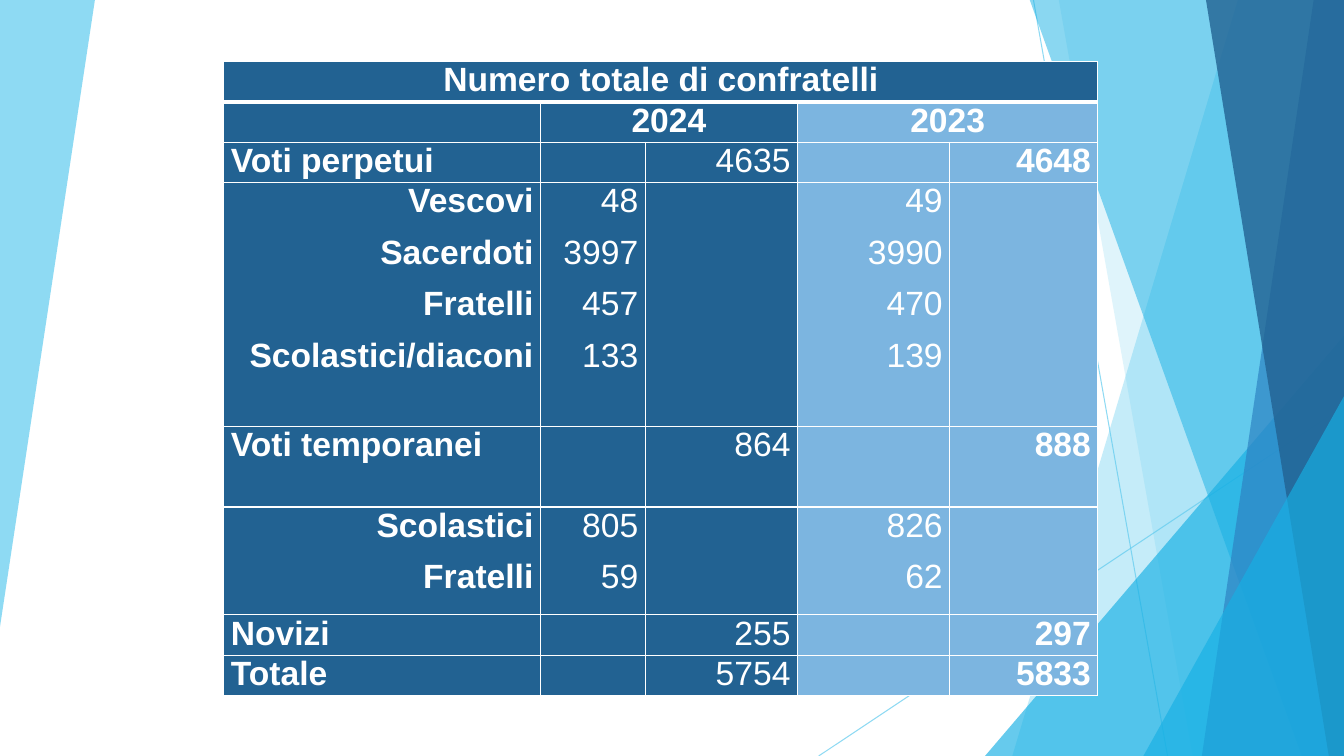
from lxml import etree
from pptx import Presentation
from pptx.dml.color import RGBColor
from pptx.enum import shapes, text
from pptx.oxml.ns import qn
from pptx.util import Inches, Pt

DARK, LIGHT, WHITE = "226292", "7CB5E0", "FFFFFF"
SKY, CYAN, BLUE = "5FCBEF", "17B0E4", "2E83C3"
LEFT, RIGHT = text.PP_ALIGN.JUSTIFY, text.PP_ALIGN.RIGHT
CENTER = text.PP_ALIGN.CENTER
TOP, BOTTOM, EDGE = -0.01, 7.5, 13.33


def rgb(value):
    return RGBColor.from_string(value)


def set_alpha(fill, percent):
    """Make a solid fill, of a shape or a line, partly transparent."""
    color = fill._xPr.find(qn("a:solidFill"))[0]
    etree.SubElement(color, qn("a:alpha"), val=str(percent * 1000))


def write(cell, lines, size=24, font="Arial", color=WHITE, bold=False, align=RIGHT):
    """Fill a cell with one paragraph for each line."""
    frame = cell.text_frame
    for index, line in enumerate(lines):
        paragraph = frame.add_paragraph() if index else frame.paragraphs[0]
        paragraph.alignment = align
        paragraph.space_after = Pt(10)
        run = paragraph.add_run()
        run.text = line
        run.font.size, run.font.name, run.font.bold = Pt(size), font, bold
        run.font.color.rgb = rgb(color)


class Deck:
    def __init__(self):
        self.presentation = Presentation()
        self.presentation.slide_width = Inches(EDGE)
        self.presentation.slide_height = Inches(BOTTOM)
        self.slide = self.presentation.slides.add_slide(
            self.presentation.slide_layouts[6])

    def paint(self, shape, color, opacity):
        shape.shadow.inherit = False
        shape.fill.solid()
        shape.fill.fore_color.rgb = rgb(color)
        set_alpha(shape.fill, opacity)
        shape.line.fill.background()

    def facet(self, points, color, opacity):
        corners = [(Inches(x), Inches(y)) for x, y in points]
        builder = self.slide.shapes.build_freeform(*corners[0])
        builder.add_line_segments(corners[1:], close=True)
        self.paint(builder.convert_to_shape(), color, opacity)

    def corner_triangle(self, left, top):
        """Right triangle filling the bottom right corner of the slide."""
        triangle = self.slide.shapes.add_shape(
            shapes.MSO_SHAPE.ISOSCELES_TRIANGLE, Inches(left), Inches(top),
            Inches(EDGE - left), Inches(BOTTOM - top))
        triangle.adjustments[0] = 1
        self.paint(triangle, CYAN, 66)

    def hairline(self, start, end):
        line = self.slide.shapes.add_connector(
            shapes.MSO_CONNECTOR.STRAIGHT, *map(Inches, start + end))
        line.line.width = Pt(0.75)
        line.line.color.rgb = rgb(SKY)
        set_alpha(line.line.fill, 70)
        etree.SubElement(line._element.spPr, qn("a:effectLst"))

    def table(self, left, top, widths, heights):
        frame = self.slide.shapes.add_table(
            len(heights), len(widths), Inches(left), Inches(top),
            Inches(sum(widths)), Inches(sum(heights)))
        grid = frame.table
        for column, width in zip(grid.columns, widths):
            column.width = Inches(width)
        for row, height in zip(grid.rows, heights):
            row.height = Inches(height)
        return grid

    def style_cell(self, cell, fill, top=1, bottom=1):
        """Set margins, white borders (widths in points) and fill."""
        cell.margin_left = cell.margin_right = Inches(0.07)
        cell.margin_top = cell.margin_bottom = 0
        properties = cell._tc.get_or_add_tcPr()
        for side, width in (("L", 1), ("R", 1), ("T", top), ("B", bottom)):
            border = etree.SubElement(properties, qn("a:ln" + side), w=str(Pt(width)))
            solid = etree.SubElement(border, qn("a:solidFill"))
            etree.SubElement(solid, qn("a:srgbClr"), val=WHITE)
        cell.fill.solid()
        cell.fill.fore_color.rgb = rgb(fill)


def draw_background(deck):
    deck.facet([(0, TOP), (0.94, TOP), (0.94, 0.01), (0, 6.22)], SKY, 70)
    deck.hairline((10.25, 0), (11.58, BOTTOM))
    deck.hairline((EDGE, 4.03), (8.12, BOTTOM))

    def right_facet(top_x, bottom_x, color, opacity):
        deck.facet([(top_x, TOP), (EDGE, TOP), (EDGE, BOTTOM), (bottom_x, BOTTOM)],
                   color, opacity)

    right_facet(12.28, 10.04, SKY, 36)
    right_facet(10.5, 11.83, SKY, 20)
    deck.corner_triangle(9.77, 3.33)
    right_facet(10.21, 12.91, CYAN, 50)
    right_facet(13.03, 11.92, BLUE, 70)
    right_facet(11.96, 13.18, DARK, 80)
    deck.corner_triangle(11.34, 3.93)


def draw_members(deck):
    # Each group: labels, 2024 values, 2023 values, whether it is a breakdown
    groups = [
        (["Voti perpetui"], ["4635"], ["4648"], False),
        (["Vescovi", "Sacerdoti", "Fratelli", "Scolastici/diaconi"],
         ["48", "3997", "457", "133"], ["49", "3990", "470", "139"], True),
        (["Voti temporanei"], ["864"], ["888"], False),
        (["Scolastici", "Fratelli"], ["805", "59"], ["826", "62"], True),
        (["Novizi"], ["255"], ["297"], False),
        (["Totale"], ["5754"], ["5833"], False),
    ]
    members = deck.table(2.22, 0.61, [3.14, 1.04, 1.51, 1.51, 1.47],
                         [0.4, 0.4, 0.4, 2.42, 0.8, 1.07, 0.4, 0.4])
    for row in range(len(members.rows)):
        for column in range(len(members.columns)):
            deck.style_cell(members.cell(row, column),
                            LIGHT if row and column > 2 else DARK,
                            top=3 if row == 1 else 1, bottom=1 if row else 3)

    headings = [(0, 0, 4, "Numero totale di confratelli"),
                (1, 1, 2, "2024"), (1, 3, 4, "2023")]
    for row, first, last, heading in headings:
        members.cell(row, first).merge(members.cell(row, last))
        write(members.cell(row, first), [heading], bold=True, align=CENTER)

    for row, (labels, now, before, breakdown) in enumerate(groups, start=2):
        offset = 0 if breakdown else 1
        write(members.cell(row, 0), labels, bold=True,
              align=RIGHT if breakdown else LEFT)
        write(members.cell(row, 1 + offset), now)
        write(members.cell(row, 3 + offset), before, bold=not breakdown)


def main():
    deck = Deck()
    draw_background(deck)
    draw_members(deck)
    deck.presentation.save("out.pptx")


if __name__ == "__main__":
    main()
